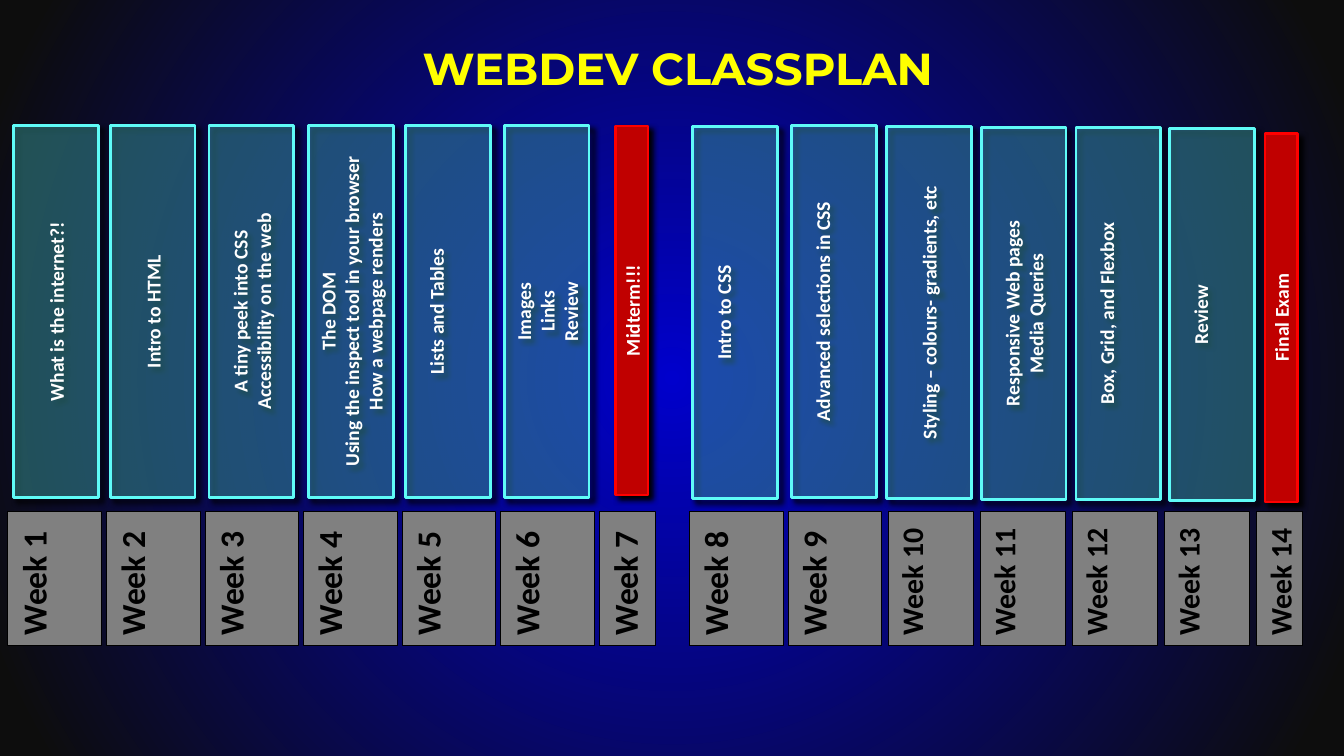
from lxml import etree
from pptx import Presentation
from pptx.dml.color import RGBColor
from pptx.enum.shapes import MSO_SHAPE
from pptx.enum.text import MSO_ANCHOR, PP_ALIGN
from pptx.oxml import parse_xml
from pptx.oxml.ns import nsdecls, qn
from pptx.util import Pt

RECT = MSO_SHAPE.RECTANGLE
TOP, MIDDLE = MSO_ANCHOR.TOP, MSO_ANCHOR.MIDDLE
LEFT, CENTER = PP_ALIGN.LEFT, PP_ALIGN.CENTER
LINE = 17  # height of one line of topic text

# lines of text, center x and y of the topic bar, lines the text is raised by
TOPICS = [
    (["What is the internet?!"], 40, 222.5, 0),
    (["Intro to HTML"], 109.1, 222.5, 0),
    (["A tiny peek into CSS", "Accessibility on the web"], 179.6, 222.5, 0),
    (["The DOM", "Using the inspect tool in your browser",
      "How a webpage renders"], 250.9, 222.5, 0),
    (["Lists and Tables"], 320, 222.5, 1),
    (["Images", "Links", "Review"], 390.6, 222.5, 0),
    (["Midterm!!!"], 451.4, 221.8, 0),
    (["Intro to CSS"], 525.2, 223.2, 1),
    (["Advanced selections in CSS"], 595.8, 222.5, 1),
    (["Styling – colours- gradients, etc"], 663.5, 223.2, 0),
    (["Responsive Web pages", "Media Queries"], 731.2, 223.9, 0),
    (["Box, Grid, and Flexbox"], 798.8, 223.9, 1),
    (["Review"], 865.8, 224.6, 1),
    (["Final Exam"], 915.1, 226.8, 0),
]
EXAM_WEEKS = (7, 14)
# first week, last week, first center x, step, thickness, text size
WEEK_GROUPS = [
    (1, 6, 39.2, 70.4, 67, 24),
    (7, 7, 448.2, 0, 40.3, 24),
    (8, 9, 526, 70.4, 67, 24),
    (10, 13, 664.9, 65.8, 60.5, 21.3),
    (14, 14, 914, 0, 32.4, 21.3),
]


def color(value):
    return RGBColor.from_string(value)


def add_bar(cx, cy, length, thickness, fill, line, line_width, lines,
            size, text_color, align, anchor):
    """Add a rectangle centered on (cx, cy) whose text reads upwards."""
    sp = slide.shapes.add_shape(RECT, Pt(cx - length / 2), Pt(cy - thickness / 2),
                                Pt(length), Pt(thickness))
    sp.rotation = 270
    sp.shadow.inherit = False
    sp.fill.solid()
    sp.fill.fore_color.rgb = color(fill)
    sp.line.color.rgb = color(line)
    sp.line.width = Pt(line_width)
    tf = sp.text_frame
    tf.word_wrap = True
    tf.vertical_anchor = anchor
    tf.text = "\n".join(lines)
    for p in tf.paragraphs:
        p.alignment = align
        p.font.name = "Calibri"
        p.font.size = Pt(size)
        p.font.bold = True
        p.font.color.rgb = color(text_color)
    return sp


prs = Presentation()
prs.slide_width, prs.slide_height = Pt(960), Pt(540)
slide = prs.slides.add_slide(prs.slide_layouts[6])

# Radial background
bg = slide.background.fill
bg.gradient()
for stop, (position, value) in zip(bg.gradient_stops, [(0, "0000CC"), (0.95, "0D0D0D")]):
    stop.position = position
    stop.color.rgb = color(value)
grad = slide.element.find(".//" + qn("a:gradFill"))
grad.replace(grad.find(qn("a:lin")), parse_xml(
    f'<a:path {nsdecls("a")} path="circle">'
    '<a:fillToRect l="50000" t="50000" r="50000" b="50000"/></a:path>'))

# Title
title = slide.shapes.add_textbox(Pt(52.3), Pt(24), Pt(864), Pt(48))
tf = title.text_frame
tf.word_wrap = True
tf.vertical_anchor = MIDDLE
p = tf.paragraphs[0]
p.text = "WEBDEV CLASSPLAN"
p.alignment = CENTER
p.font.name = "Montserrat"
p.font.size = Pt(32)
p.font.bold = True
p.font.color.rgb = color("FFFF00")

# Week labels
for first, last, x, step, thickness, size in WEEK_GROUPS:
    for week in range(first, last + 1):
        add_bar(x + (week - first) * step, 412.9, 95.8, thickness, "808080", "000000",
                0.75, [f"Week {week}"], size, "000000", LEFT, TOP)

# Topic and exam bars
for week, (lines, x, y, raised) in enumerate(TOPICS, 1):
    if week in EXAM_WEEKS:
        sp = add_bar(x, y, 263.5, 23, "C00000", "FF0000", 2, lines,
                     14, "FFFFFF", CENTER, MIDDLE)
    else:
        sp = add_bar(x, y, 265.7, 60.5, "5FFBF7", "5FFBF7", 2, lines,
                     14, "FFFFFF", CENTER, MIDDLE)
        tf = sp.text_frame
        tf.margin_left = tf.margin_right = Pt(9.4)
        tf.margin_top = Pt(5)
        tf.margin_bottom = Pt(5 + raised * LINE)
        fill = sp.element.spPr.find(qn("a:solidFill"))
        etree.SubElement(fill[0], qn("a:alpha"), val="30000")
    sp.element.spPr.find(qn("a:effectLst")).append(parse_xml(
        f'<a:outerShdw {nsdecls("a")} blurRad="50800" dist="50800" dir="2700000" '
        'rotWithShape="0"><a:srgbClr val="000000"/></a:outerShdw>'))

prs.save("out.pptx")
